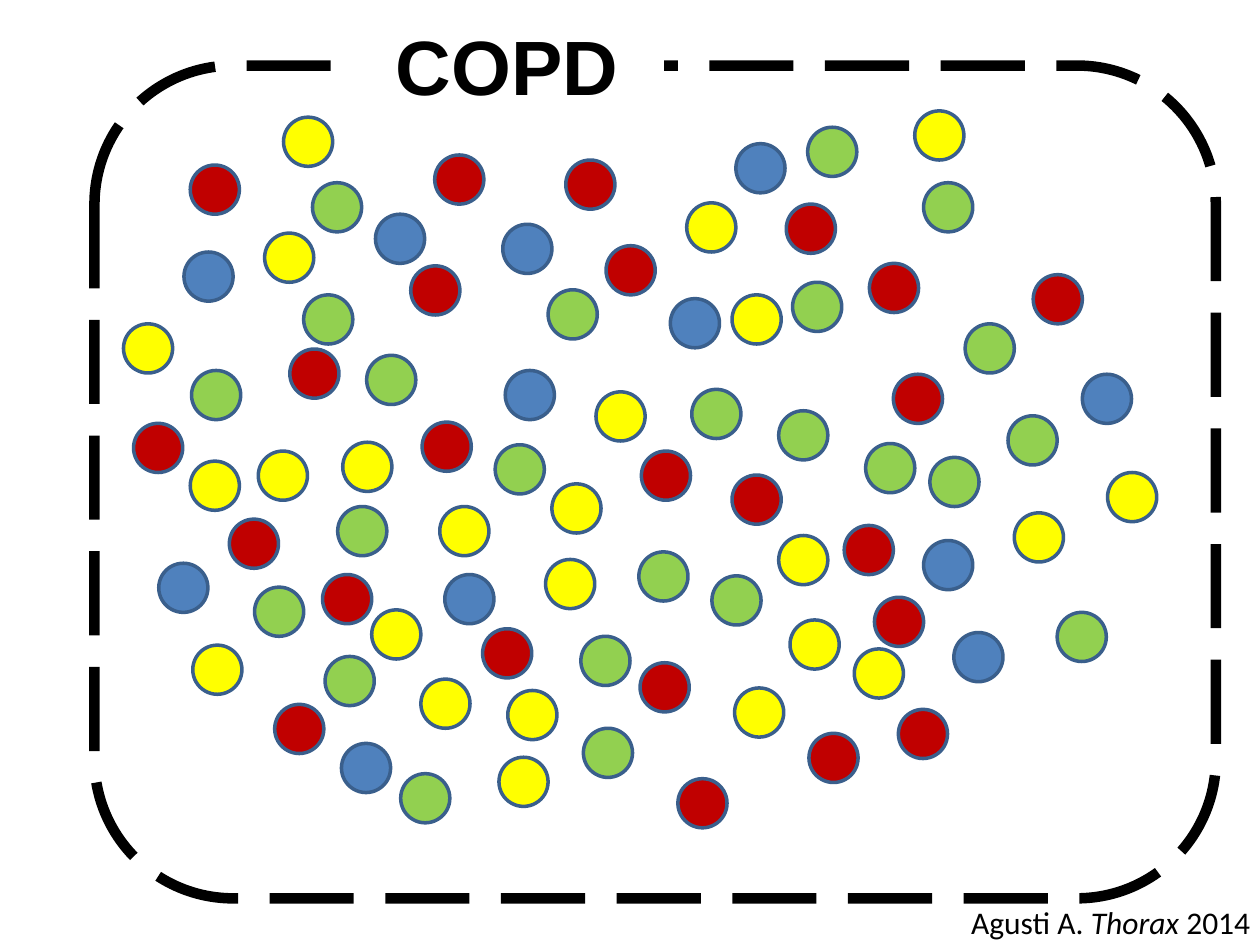
from lxml import etree
from pptx import Presentation
from pptx import util as u
from pptx.dml.color import RGBColor
from pptx.enum import dml, shapes, text

# Content
TITLE = "COPD"
CITATION = [("Agusti A. ", False), ("Thorax", True), (" 2014", False)]

COLORS = {
    "blue": "4F81BD", "red": "C00000", "yellow": "FFFF00", "green": "92D050",
    "outline": "3A5F8C", "black": "000000", "white": "FFFFFF",
}

# Left and top of every dot, in inches, by colour from back to front
DOTS = {
    "blue": [
        (3.99, 1.78), (7.57, 5.02), (7.33, 4.29), (1.46, 2), (2.98, 1.7),
        (5.84, 1.14), (5.32, 2.37), (4.01, 2.94), (2.71, 5.9), (1.26, 4.47),
        (3.53, 4.56), (8.59, 2.97),
    ],
    "red": [
        (6.24, 1.62), (3.26, 2.11), (6.9, 2.09), (3.35, 3.35), (2.56, 4.56),
        (3.83, 4.99), (2.18, 5.59), (5.38, 6.18), (5.08, 5.26), (6.7, 4.17),
        (3.45, 1.23), (7.13, 5.63), (4.81, 1.95), (1.06, 3.36), (7.09, 2.97),
        (5.81, 3.77), (8.2, 2.18), (6.94, 4.74), (1.51, 1.31), (2.3, 2.77),
        (1.82, 4.12), (6.42, 5.82), (5.09, 3.58), (4.49, 1.27),
    ],
    "yellow": [
        (2.05, 3.58), (2.25, 0.93), (0.98, 2.57), (2.1, 1.85), (8.79, 3.75),
        (7.26, 0.88), (4.73, 3.11), (4.33, 4.44), (6.18, 4.25), (4.38, 3.84),
        (3.96, 6.01), (3.49, 4.02), (8.05, 4.07), (1.51, 3.66), (5.45, 1.61),
        (1.53, 5.12), (2.95, 4.84), (2.72, 3.51), (6.78, 5.15), (4.03, 5.48),
        (6.27, 4.92), (5.83, 5.46), (3.34, 5.39), (5.81, 2.34),
    ],
    "green": [
        (2.91, 2.82), (4.63, 5.78), (5.65, 4.57), (2.68, 4.02), (5.07, 4.38),
        (6.29, 2.24), (2.41, 2.34), (7.66, 2.57), (4.35, 2.3), (4.61, 5.05),
        (8, 3.3), (7.38, 3.63), (3.18, 6.14), (3.93, 3.53), (5.49, 3.09),
        (6.41, 1.01), (2.02, 4.66), (8.39, 4.86), (7.33, 1.45), (1.52, 2.94),
        (6.87, 3.52), (2.58, 5.21), (6.18, 3.26), (2.48, 1.45),
    ],
}
DOT_SIZE = 0.39
FRAME_BOX = (0.75, 0.52, 8.9, 6.61)
TITLE_BOX = (2.78, 0.09, 2.49, 0.84)
CITATION_BOX = (7.61, 7.12, 2.43, 0.4)

TITLE_FONT = {"name": "Arial", "size": u.Pt(44), "bold": True}
CITATION_FONT = {"name": "Calibri", "size": u.Pt(18)}


def cm(*inches):
    return [u.Cm(v * 2.54) for v in inches]


def rgb(name):
    return RGBColor.from_string(COLORS[name])


def add_shape(s, kind, box, line, width, fill=None):
    sp = s.shapes.add_shape(kind, *cm(*box))
    sp.shadow.inherit = False
    if fill:
        sp.fill.solid()
        sp.fill.fore_color.rgb = rgb(fill)
    else:
        sp.fill.background()
    sp.line.color.rgb = rgb(line)
    sp.line.width = u.Pt(width)
    return sp


def add_run(p, words, **fmt):
    r = p.add_run()
    r.text = words
    r.font.color.rgb = rgb("black")
    for name, value in fmt.items():
        setattr(r.font, name, value)


prs = Presentation()
prs.slide_width, prs.slide_height = cm(10, 7.5)
s = prs.slides.add_slide(prs.slide_layouts[5])

# Dots
for color, places in DOTS.items():
    for left, top in places:
        add_shape(s, shapes.MSO_SHAPE.OVAL, (left, top, DOT_SIZE, DOT_SIZE),
                  "outline", 2, color)

# Dashed frame
frame = add_shape(s, shapes.MSO_SHAPE.ROUNDED_RECTANGLE, FRAME_BOX, "black", 6)
frame.line.dash_style = dml.MSO_LINE.LONG_DASH

# Title, in front of the frame so that it interrupts the dashes
title = s.shapes.title
s.shapes._spTree.append(title._element)
title.left, title.top, title.width, title.height = cm(*TITLE_BOX)
title.fill.solid()
title.fill.fore_color.rgb = rgb("white")
tf = title.text_frame
tf.auto_size = text.MSO_AUTO_SIZE.NONE
tf.vertical_anchor = text.MSO_ANCHOR.MIDDLE
p = tf.paragraphs[0]
p.alignment = text.PP_ALIGN.CENTER
add_run(p, TITLE, **TITLE_FONT)

# Citation
tf = s.shapes.add_textbox(*cm(*CITATION_BOX)).text_frame
tf.word_wrap = False
for words, italic in CITATION:
    add_run(tf.paragraphs[0], words, italic=italic, **CITATION_FONT)

prs.save("out.pptx")
